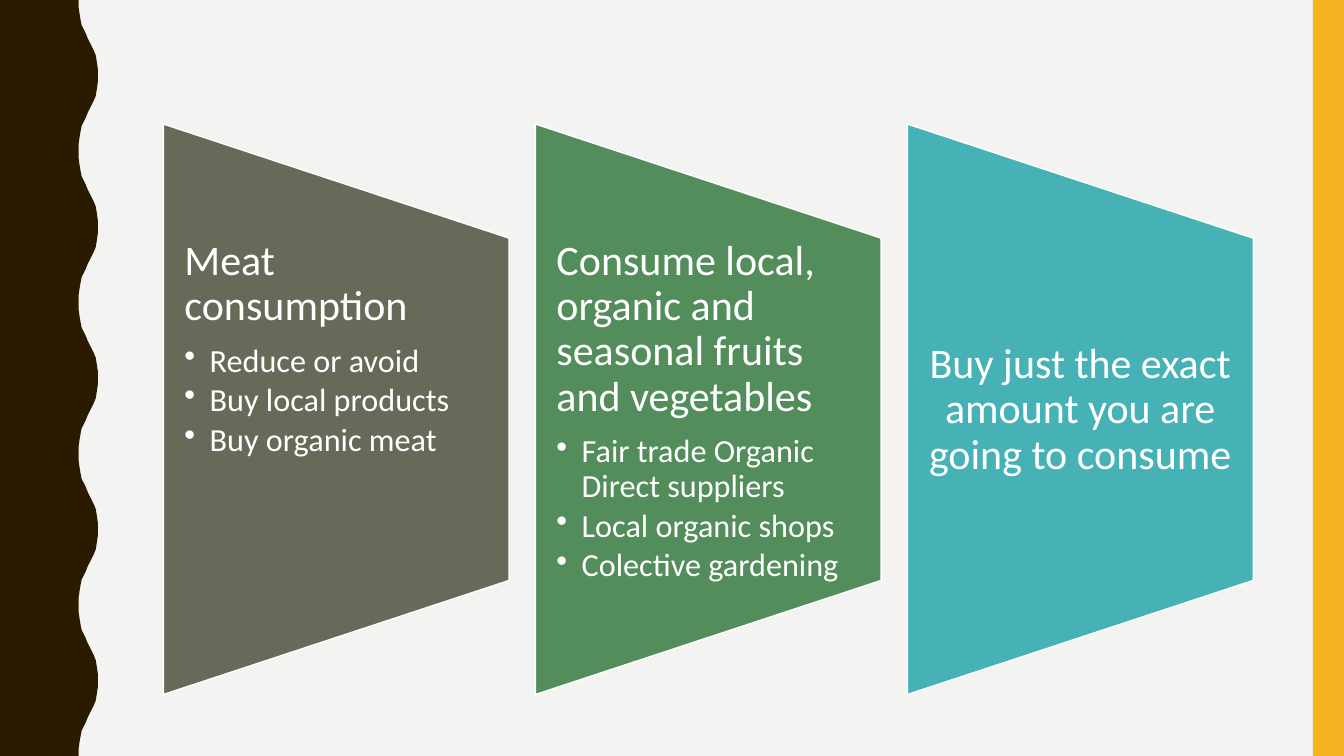
from lxml import etree
from pptx import Presentation
from pptx.dml.color import RGBColor
from pptx.enum.shapes import MSO_SHAPE
from pptx.enum.text import MSO_ANCHOR, PP_ALIGN
from pptx.oxml.ns import qn
from pptx.util import Inches, Pt

RECTANGLE = MSO_SHAPE.RECTANGLE
TRAPEZOID = MSO_SHAPE.FLOWCHART_MANUAL_OPERATION
TOP, MIDDLE = MSO_ANCHOR.TOP, MSO_ANCHOR.MIDDLE
LEFT, CENTER = PP_ALIGN.LEFT, PP_ALIGN.CENTER

COLORS = {
    "background": "F3F3F2",
    "wave": "2A1A00",
    "stripe": "F8B323",
    "meat": "656A59",
    "produce": "528D5B",
    "amount": "46B2B5",
    "white": "FFFFFF",
}
FONT = "Calibri"
SLIDE_WIDTH, SLIDE_HEIGHT = 13.33, 7.5

# Panels: left edge and pitch of the columns, width and height as seen
PANEL_LEFT, PANEL_PITCH = 1.62, 3.69
PANEL_WIDTH, PANEL_HEIGHT = 3.43, 5.66
PANEL_MIDDLE = 4.06
TEXT_TOP, TEXT_HEIGHT = 2.37, 3.4

PANELS = [
    ("meat", "Meat consumption",
     ["Reduce or avoid", "Buy local products", "Buy organic meat"]),
    ("produce", "Consume local, organic and seasonal fruits and vegetables",
     ["Fair trade Organic Direct suppliers", "Local organic shops",
      "Colective gardening"]),
    ("amount", "Buy just the exact amount you are going to consume", []),
]

# Wave edge: half a period, from trough to crest
WAVE_PERIOD, WAVE_COUNT = 1.5, 5
HALF_WAVE = [
    (0.78, 0), (0.78, 0.07), (0.79, 0.14), (0.8, 0.2), (0.81, 0.25),
    (0.83, 0.29), (0.85, 0.33), (0.87, 0.38), (0.89, 0.42), (0.91, 0.46),
    (0.93, 0.5), (0.95, 0.55), (0.96, 0.61), (0.97, 0.68), (0.97, 0.75),
]


def color(name):
    return RGBColor.from_string(COLORS[name])


def paint(shape, fill, line=None):
    shape.shadow.inherit = False
    shape.fill.solid()
    shape.fill.fore_color.rgb = color(fill)
    if line:
        shape.line.color.rgb = color(line)
        shape.line.width = Pt(1)
    else:
        shape.line.fill.background()


def add_wave(page):
    mirrored = [(x, WAVE_PERIOD - y) for x, y in reversed(HALF_WAVE[:-1])]
    edge = [(x, y + number * WAVE_PERIOD)
            for number in range(WAVE_COUNT) for x, y in HALF_WAVE + mirrored]
    points = [(Inches(x), Inches(y)) for x, y in edge + [(0, SLIDE_HEIGHT)]]
    builder = page.shapes.build_freeform(0, 0)
    builder.add_line_segments(points, close=True)
    paint(builder.convert_to_shape(), "wave")


def add_stripe(page):
    stripe = page.shapes.add_shape(
        RECTANGLE, Inches(13.02), 0, Inches(0.31), Inches(SLIDE_HEIGHT))
    paint(stripe, "stripe")


def add_trapezoid(page, left, fill):
    # The shape is turned a quarter, so its own width is the visible height
    center = left + PANEL_WIDTH / 2
    trapezoid = page.shapes.add_shape(
        TRAPEZOID, Inches(center - PANEL_HEIGHT / 2),
        Inches(PANEL_MIDDLE - PANEL_WIDTH / 2),
        Inches(PANEL_HEIGHT), Inches(PANEL_WIDTH))
    trapezoid.rotation = 270
    paint(trapezoid, fill, "white")


def write_para(para, text, size, space_after, align):
    formats = {"alignment": align, "line_spacing": 0.9,
               "space_before": Pt(0), "space_after": Pt(space_after)}
    for name, value in formats.items():
        setattr(para, name, value)
    span = para.add_run()
    span.text = text
    span.font.name = FONT
    span.font.size = Pt(size)
    span.font.color.rgb = color("white")


def add_bullet(para):
    para.level = 1
    properties = para._p.get_or_add_pPr()
    properties.set("marL", str(Inches(0.25)))
    properties.set("indent", str(-Inches(0.25)))
    etree.SubElement(properties, qn("a:buChar")).set("char", "•")


def add_panel_text(page, left, heading, items):
    box = page.shapes.add_textbox(
        Inches(left), Inches(TEXT_TOP), Inches(PANEL_WIDTH), Inches(TEXT_HEIGHT))
    frame = box.text_frame
    formats = {"word_wrap": True, "vertical_anchor": TOP if items else MIDDLE,
               "margin_left": Inches(0.21), "margin_right": Inches(0.21),
               "margin_top": 0, "margin_bottom": 0}
    for name, value in formats.items():
        setattr(frame, name, value)
    write_para(frame.paragraphs[0], heading, 30, 10.5, LEFT if items else CENTER)
    for item in items:
        para = frame.add_paragraph()
        write_para(para, item, 23, 3.45, LEFT)
        add_bullet(para)


def main():
    deck = Presentation()
    deck.slide_width = Inches(SLIDE_WIDTH)
    deck.slide_height = Inches(SLIDE_HEIGHT)
    page = deck.slides.add_slide(deck.slide_layouts[6])

    # Backdrop
    page.background.fill.solid()
    page.background.fill.fore_color.rgb = color("background")
    add_wave(page)
    add_stripe(page)

    # Three columns
    for column, (fill, heading, items) in enumerate(PANELS):
        left = PANEL_LEFT + column * PANEL_PITCH
        add_trapezoid(page, left, fill)
        add_panel_text(page, left, heading, items)

    deck.save("out.pptx")


if __name__ == "__main__":
    main()
